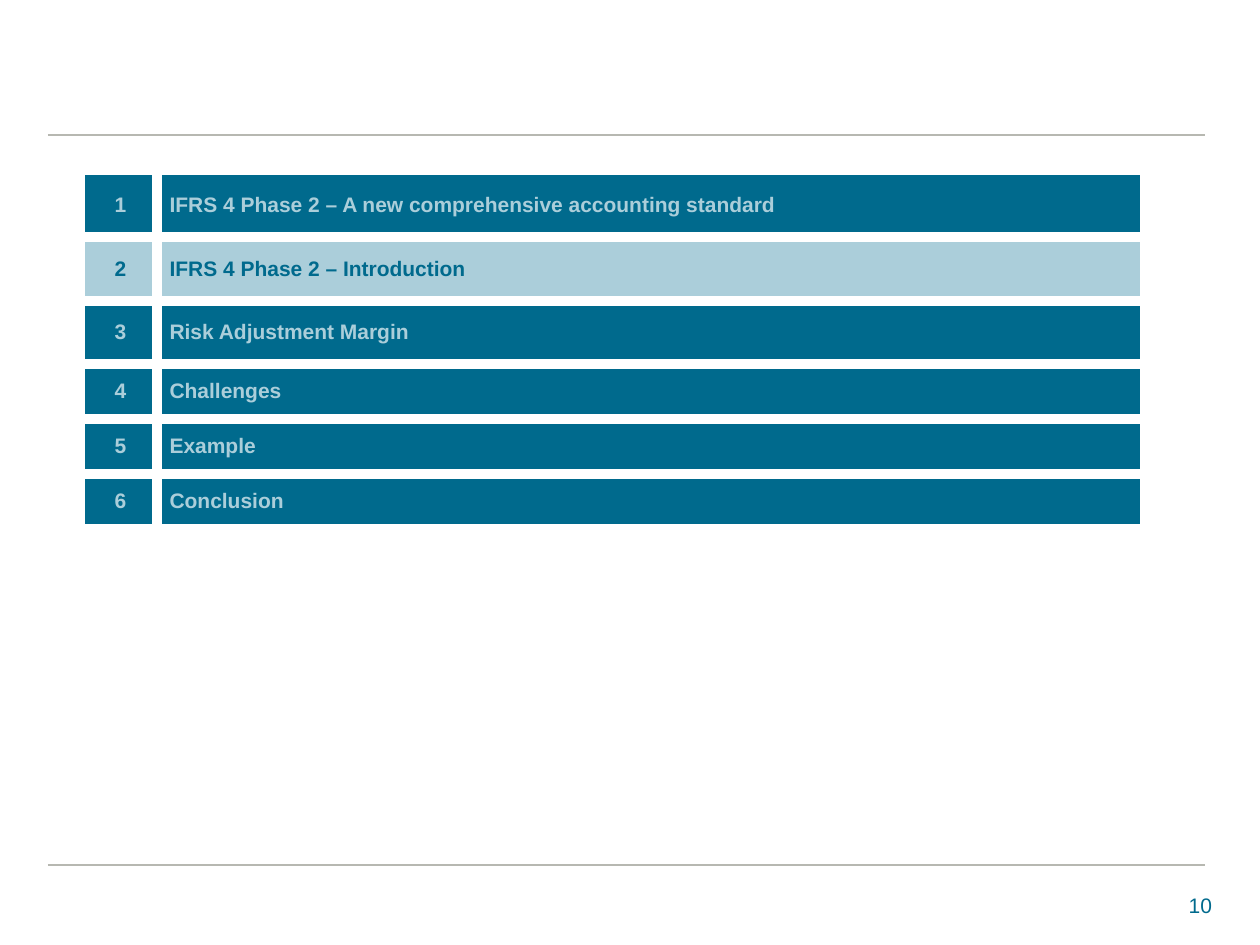
import pptx
import pptx.dml.color
import pptx.enum.shapes
import pptx.enum.text
import pptx.oxml
import pptx.oxml.ns
import pptx.util

EMU_PER_PX = 914400 / 126
FONT = "Arial"
COLORS = {"teal": "006A8D", "pale": "ABCEDA", "rule": "B7B8B1", "white": "FFFFFF"}
COLUMN_WIDTHS = [73, 984]
ACTIVE_ROW = 1
AGENDA = [
    ("IFRS 4 Phase 2 – A new comprehensive accounting standard", 63),
    ("IFRS 4 Phase 2 – Introduction", 64),
    ("Risk Adjustment Margin", 63),
    ("Challenges", 55),
    ("Example", 55),
    ("Conclusion", 55),
]


def px(length):
    return pptx.util.Emu(round(length * EMU_PER_PX))


def rgb(name):
    return pptx.dml.color.RGBColor.from_string(COLORS[name])


def format_paragraph(paragraph, color, alignment, bold=False):
    paragraph.alignment = alignment
    paragraph.font.name = FONT
    paragraph.font.size = pptx.util.Pt(12)
    paragraph.font.bold = bold
    paragraph.font.color.rgb = rgb(color)


def add_rule(slide, top):
    connector = slide.shapes.add_connector(
        pptx.enum.shapes.MSO_CONNECTOR.STRAIGHT, px(48), px(top), px(1205), px(top)
    )
    connector.line.color.rgb = rgb("rule")
    connector.line.width = pptx.util.Pt(0.75)
    properties = connector._element.spPr
    properties.append(pptx.oxml.parse_xml(f"<a:effectLst {pptx.oxml.ns.nsdecls('a')}/>"))


def add_page_number(slide, number):
    text_box = slide.shapes.add_textbox(px(937), px(886), px(275), px(38))
    frame = text_box.text_frame
    frame.word_wrap = True
    frame.margin_right = 0
    frame.text = number
    format_paragraph(frame.paragraphs[0], "teal", pptx.enum.text.PP_ALIGN.RIGHT)


def set_borders(cell, widths):
    properties = cell._tc.get_or_add_tcPr()
    for side, width in widths.items():
        properties.append(pptx.oxml.parse_xml(
            f"<a:ln{side} {pptx.oxml.ns.nsdecls('a')} w='{pptx.util.Pt(width)}'>"
            f"<a:solidFill><a:srgbClr val='{COLORS['white']}'/></a:solidFill></a:ln{side}>"
        ))


def fill_cell(cell, text, row, column):
    active = row == ACTIVE_ROW
    set_borders(cell, {
        "L": 6 if column else 1,
        "R": 1 if column else 6,
        "T": 6 if row else 1,
        "B": 6,
    })
    cell.fill.solid()
    cell.fill.fore_color.rgb = rgb("pale" if active else "teal")
    cell.vertical_anchor = pptx.enum.text.MSO_ANCHOR.MIDDLE
    cell.text = text
    paragraph = cell.text_frame.paragraphs[0]
    alignment = pptx.enum.text.PP_ALIGN.LEFT if column else pptx.enum.text.PP_ALIGN.CENTER
    format_paragraph(paragraph, "teal" if active else "pale", alignment, bold=True)
    if not column or row < 4:
        indent = px(48)
        paragraph_properties = paragraph._p.get_or_add_pPr()
        paragraph_properties.set("marL", str(indent))
        paragraph_properties.set("indent", str(-indent))


def add_agenda(slide):
    height = sum(row_height for _, row_height in AGENDA)
    table = slide.shapes.add_table(
        len(AGENDA), len(COLUMN_WIDTHS), px(84), px(174), px(sum(COLUMN_WIDTHS)), px(height)
    ).table
    table.first_row = False
    table.horz_banding = False
    for column, width in zip(table.columns, COLUMN_WIDTHS):
        column.width = px(width)
    for row, (topic, row_height) in enumerate(AGENDA):
        table.rows[row].height = px(row_height)
        for column, text in enumerate((str(row + 1), topic)):
            fill_cell(table.cell(row, column), text, row, column)


def main():
    presentation = pptx.Presentation()
    presentation.slide_width = px(1260)
    presentation.slide_height = px(945)
    slide = presentation.slides.add_slide(presentation.slide_layouts[6])
    for top in (135, 865):
        add_rule(slide, top)
    add_page_number(slide, "10")
    add_agenda(slide)
    presentation.save("out.pptx")


if __name__ == "__main__":
    main()
